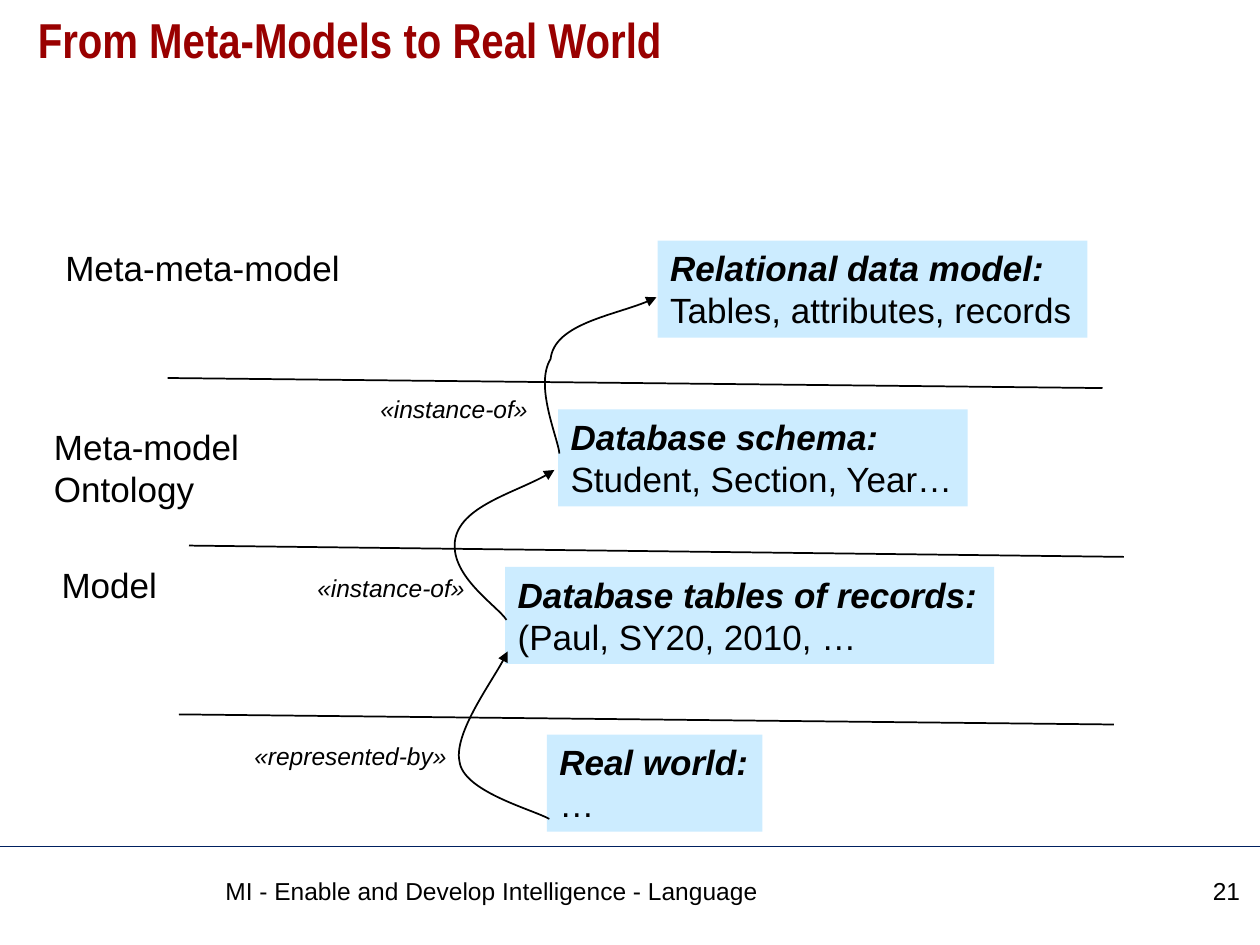
import pptx
import pptx.dml.color
import pptx.enum.shapes
import pptx.enum.text
import pptx.oxml
import pptx.oxml.ns
import pptx.util
from pptx.util import Inches

COLORS = {"title": "990000", "text": "000000", "box": "CCECFF", "rule": "002060"}

LEVELS = [
    ((0.42, 1.91, 2.4, 0.44), ["Meta-meta-model"],
     (5.22, 1.91, 3.41, 0.77), "Relational data model:", "Tables, attributes, records"),
    ((0.33, 3.33, 1.68, 0.77), ["Meta-model", "Ontology"],
     (4.43, 3.25, 3.25, 0.77), "Database schema:", "Student, Section, Year…"),
    ((0.39, 4.42, 0.97, 0.44), ["Model"],
     (4.01, 4.5, 3.88, 0.77), "Database tables of records:", "(Paul, SY20, 2010, …"),
    (None, [], (4.34, 5.83, 1.71, 0.77), "Real world:", "…"),
]
SEPARATORS = [(1.33, 3, 7.42, 0.08), (1.5, 4.33, 7.42, 0.09), (1.42, 5.67, 7.42, 0.08)]
RELATIONS = [
    ((1.92, 5.83, 1.73, 0.33), "«represented-by»",
     [(4.36, 6.5), (4.24, 6.43), (3.7, 6.29), (3.65, 6.06),
      (3.59, 5.84), (3.95, 5.35), (4.03, 5.17)]),
    ((2.42, 4.5, 1.37, 0.33), "«instance-of»",
     [(4.02, 4.92), (3.95, 4.81), (3.58, 4.58), (3.61, 4.3),
      (3.64, 4.02), (4.17, 3.89), (4.4, 3.73)]),
    ((2.92, 3.08, 1.37, 0.33), "«instance-of»",
     [(4.44, 3.6), (4.43, 3.48), (4.24, 3.06), (4.37, 2.85),
      (4.4, 2.57), (4.96, 2.49), (5.21, 2.36)]),
]


def rgb(name):
    """Return the named colour."""
    return pptx.dml.color.RGBColor.from_string(COLORS[name])


def write(p, text, size=20, font="Arial", color="text", bold=False, italic=False, align=None):
    """Write one formatted run into a paragraph."""
    r = p.add_run()
    r.text = text
    r.font.size = pptx.util.Pt(size)
    r.font.name = font
    r.font.color.rgb = rgb(color)
    r.font.bold = bold
    r.font.italic = italic
    p.alignment = align or pptx.enum.text.PP_ALIGN.LEFT


def fit(tf):
    """Let a frame grow with its unwrapped text."""
    tf.word_wrap = False
    tf.auto_size = pptx.enum.text.MSO_AUTO_SIZE.SHAPE_TO_FIT_TEXT
    tf.vertical_anchor = pptx.enum.text.MSO_ANCHOR.TOP


def add_label(s, box, lines, wrap=False, **fmt):
    """Add a text box with one paragraph for each line."""
    tf = s.shapes.add_textbox(*map(Inches, box)).text_frame
    if wrap:
        tf.word_wrap = True
    else:
        fit(tf)
    for i, line in enumerate(lines):
        write(tf.add_paragraph() if i else tf.paragraphs[0], line, **fmt)


def add_rule(s, box, color="text", width=1):
    """Draw a line from the top left to the bottom right of the box."""
    x, y, w, h = box
    c = s.shapes.add_connector(pptx.enum.shapes.MSO_CONNECTOR.STRAIGHT,
                               Inches(x), Inches(y), Inches(x + w), Inches(y + h))
    c.line.color.rgb = rgb(color)
    c.line.width = pptx.util.Pt(width)
    pptx.oxml.ns.qn("a:effectLst")
    c._element.spPr.append(pptx.oxml.parse_xml(
        f"<a:effectLst {pptx.oxml.ns.nsdecls('a')}/>"))


def add_example(s, box, heading, detail):
    """Add a filled box with a heading and one line of detail."""
    sp = s.shapes.add_shape(pptx.enum.shapes.MSO_SHAPE.RECTANGLE, *map(Inches, box))
    sp.shadow.inherit = False
    sp.fill.solid()
    sp.fill.fore_color.rgb = rgb("box")
    sp.line.fill.background()
    tf = sp.text_frame
    fit(tf)
    write(tf.paragraphs[0], heading, bold=True, italic=True)
    write(tf.add_paragraph(), detail)


def add_curve(s, points):
    """Draw a Bezier curve with an arrowhead at its end."""
    qn, ns = pptx.oxml.ns.qn, pptx.oxml.ns.nsdecls("a")
    start, *rest = [(Inches(x), Inches(y)) for x, y in points]
    builder = s.shapes.build_freeform(*start)
    builder.add_line_segments(rest, close=False)
    sp = builder.convert_to_shape()
    sp.shadow.inherit = False
    sp.fill.background()
    sp.line.color.rgb = rgb("text")
    sp.line.width = pptx.util.Pt(1)
    sp.line._get_or_add_ln().append(pptx.oxml.parse_xml(f'<a:tailEnd {ns} type="triangle"/>'))
    segments = list(sp._element.iter(qn("a:lnTo")))
    for i in range(0, len(segments), 3):
        bezier = pptx.oxml.parse_xml(f"<a:cubicBezTo {ns}/>")
        segments[i].addprevious(bezier)
        for segment in segments[i:i + 3]:
            bezier.append(segment[0])
            segment.getparent().remove(segment)


def add_title(s, box, text):
    """Place and format the title placeholder."""
    sp = s.shapes.title
    sp.left, sp.top, sp.width, sp.height = map(Inches, box)
    tf = sp.text_frame
    tf.word_wrap = True
    tf.auto_size = pptx.enum.text.MSO_AUTO_SIZE.NONE
    tf.vertical_anchor = pptx.enum.text.MSO_ANCHOR.TOP
    p = tf.paragraphs[0]
    p.line_spacing = 0.9
    write(p, text, size=28, font="Arial Narrow", color="title", bold=True)


def add_footer(s, box):
    """Add the footer rule, text and slide number."""
    x, y, w, h = box
    add_rule(s, (x, y, w, 0), color="rule", width=0.75)
    add_label(s, (x + 1.69, y + 0.18, 7.21, 0.45),
              ["MI - Enable and Develop Intelligence - Language"], wrap=True, size=14)
    add_label(s, (x + 9.02, y + 0.18, 0.92, 0.45), ["21"], wrap=True, size=14,
              align=pptx.enum.text.PP_ALIGN.RIGHT)


def main():
    """Build and save the slide."""
    prs = pptx.Presentation()
    prs.slide_width, prs.slide_height = Inches(10), Inches(7.5)
    s = prs.slides.add_slide(prs.slide_layouts[5])
    add_title(s, (0.2, 0.08, 9.61, 0.83), "From Meta-Models to Real World")
    add_footer(s, (0, 6.72, 10, 0.78))
    for box in SEPARATORS:
        add_rule(s, box)
    for label_box, lines, box, heading, detail in LEVELS:
        if lines:
            add_label(s, label_box, lines)
        add_example(s, box, heading, detail)
    for box, text, points in RELATIONS:
        add_curve(s, points)
        add_label(s, box, [text], size=14, italic=True)
    prs.save("out.pptx")


if __name__ == "__main__":
    main()
